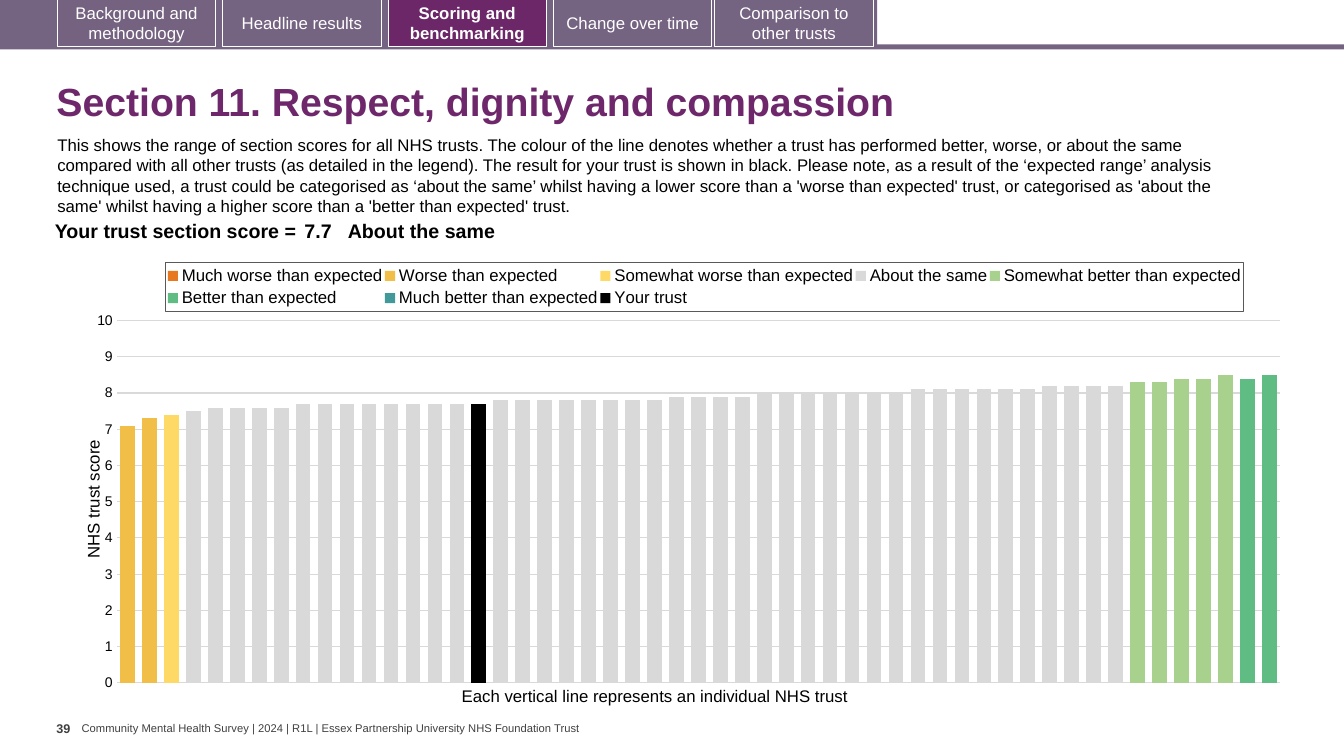
"""Build the section score slide with its tabs, score row and chart of trusts."""
from copy import deepcopy
from lxml.etree import SubElement
from pptx import Presentation
from pptx.chart.data import CategoryChartData as Data
from pptx.dml.color import RGBColor as RGB
from pptx.enum.chart import XL_CHART_TYPE as Kind, XL_LEGEND_POSITION as Spot
from pptx.enum.chart import XL_TICK_MARK as Tick
from pptx.enum.shapes import MSO_SHAPE as Form
from pptx.enum.text import MSO_ANCHOR as Anchor, PP_ALIGN as Align
from pptx.oxml import parse_xml
from pptx.oxml.ns import qn
from pptx.util import Inches, Pt

HUES = {"bar": "756382", "tab": "746280", "now": "6B2768", "title": "6D276A",
        "white": "FFFFFF", "black": "000000", "foot": "404040",
        "grid": "D9D9D9", "edge": "595959"}
TABS = [("Background and methodology", 0.57, "tab"),
        ("Headline results", 2.21, "bar"),
        ("Scoring and benchmarking", 3.85, "now"),
        ("Change over time", 5.49, "bar"),
        ("Comparison to other trusts", 7.09, "bar")]
TITLE = "Section 11. Respect, dignity and compassion"
INTRO = ("This shows the range of section scores for all NHS trusts. The colour of the "
         "line denotes whether a trust has performed better, worse, or about the same "
         "compared with all other trusts (as detailed in the legend). The result for "
         "your trust is shown in black. Please note, as a result of the ‘expected range’ "
         "analysis technique used, a trust could be categorised as ‘about the same’ "
         "whilst having a lower score than a 'worse than expected' trust, or categorised "
         "as 'about the same' whilst having a higher score than a 'better than expected' "
         "trust.")
NOTES = [(INTRO, (0.47, 1.29, 12.13, 0.91), 0.1, 0.05, 12, "black", False, True),
         ("Each vertical line represents an individual NHS trust",
          (4.48, 6.75, 4.11, 0.3), 0.1, 0.05, 12, "black", False, False),
         ("39", (0.56, 7.1, 0.25, 0.4), 0, 0.05, 9, "foot", True, False),
         ("Community Mental Health Survey | 2024 | R1L | Essex Partnership University "
          "NHS Foundation Trust", (0.81, 7.16, 5.01, 0.13), 0, 0, 8, "foot", False, False)]
SCORE = [("Your trust section score =", 2.63, 0.04, Align.RIGHT),
         ("7.7", 0.47, 0.04, Align.LEFT), ("About the same", 8.6, 0, Align.LEFT)]
COUNT = 53
SAME = ([7.5] + [7.6] * 4 + [7.7] * 9 + [7.8] * 8 + [7.9] * 4 + [8] * 7
        + [8.1] * 6 + [8.2] * 4)
BANDS = [("Much worse than expected", "E87722", 0, []),
         ("Worse than expected", "F1BE48", 0, [7.1, 7.3]),
         ("Somewhat worse than expected", "FFD966", 2, [7.4]),
         ("About the same", "D9D9D9", 3, SAME),
         ("Somewhat better than expected", "A9D18E", 46, [8.3, 8.3, 8.4, 8.4, 8.5]),
         ("Better than expected", "5FBD83", 51, [8.4, 8.5]),
         ("Much better than expected", "419999", 0, []),
         ("Your trust", "000000", 16, [7.7])]


def hue(name):
    return RGB.from_string(HUES[name])


def ink(font, size, name="black", bold=False):
    for key, val in {"name": "Arial", "size": Pt(size), "bold": bold}.items():
        setattr(font, key, val)
    font.color.rgb = hue(name)


def write(frame, text, size, name, bold=False, align=Align.LEFT):
    para = frame.paragraphs[0]
    para.alignment = align
    run = para.add_run()
    run.text = text
    ink(run.font, size, name, bold)


def pad(box, side, end):
    box.margin_left = box.margin_right = Inches(side)
    box.margin_top = box.margin_bottom = Inches(end)


def block(slide, at, name):
    shape = slide.shapes.add_shape(Form.RECTANGLE, *map(Inches, at))
    shape.shadow.inherit = False
    shape.fill.solid()
    shape.fill.fore_color.rgb = hue(name)
    shape.line.fill.background()
    return shape


def draw_tabs(slide):
    block(slide, (0, 0.44, 13.33, 0.05), "bar")
    block(slide, (0, 0, 8.7, 0.47), "bar")
    for text, left, name in TABS:
        tab = block(slide, (left, -0.01, 1.57, 0.47), name)
        tab.line.color.rgb = hue("white")
        tab.line.width = Pt(0.75)
        frame = tab.text_frame
        frame.word_wrap = True
        frame.vertical_anchor = Anchor.MIDDLE
        write(frame, text, 12, "white", name == "now", Align.CENTER)


def draw_text(slide):
    title = slide.shapes.title
    for key, val in zip(("left", "top", "width", "height"), (0.46, 0.67, 12.49, 0.72)):
        setattr(title, key, Inches(val))
    title.text_frame.vertical_anchor = Anchor.MIDDLE
    write(title.text_frame, TITLE, 28, "title", True)
    title.text_frame.paragraphs[0].line_spacing = 0.9
    for text, at, side, end, size, name, bold, wrap in NOTES:
        frame = slide.shapes.add_textbox(*map(Inches, at)).text_frame
        frame.word_wrap = wrap
        pad(frame, side, end)
        write(frame, text, size, name, bold)


def draw_score(slide):
    at = map(Inches, (0.35, 2.15, 11.7, 0.31))
    table = slide.shapes.add_table(1, len(SCORE), *at).table
    table.first_row = table.horz_banding = False
    for i, (text, width, side, align) in enumerate(SCORE):
        table.columns[i].width = Inches(width)
        cell = table.cell(0, i)
        cell.fill.background()
        pad(cell, side, 0.04)
        write(cell.text_frame, text, 14, "black", True, align)


def place(owner, **spots):
    for old in owner.findall(qn("c:layout")):
        owner.remove(old)
    box = SubElement(owner, qn("c:layout"))
    part = SubElement(box, qn("c:manualLayout"))
    if owner.tag == qn("c:plotArea"):
        SubElement(part, qn("c:layoutTarget")).set("val", "inner")
    for key in "xy":
        SubElement(part, qn(f"c:{key}Mode")).set("val", "edge")
    for key, val in spots.items():
        SubElement(part, qn(f"c:{key}")).set("val", str(val))
    owner.insert(sum(kid.tag in (qn("c:tx"), qn("c:legendPos")) for kid in owner), box)


def split(chart):
    """Move the last series to a second pair of axes."""
    bars = chart.plots[0]._element
    twin = deepcopy(bars)
    bars.remove(bars.findall(qn("c:ser"))[-1])
    for row in twin.findall(qn("c:ser"))[:-1]:
        twin.remove(row)
    bars.addnext(twin)
    cat, val = chart.category_axis._element, chart.value_axis._element
    cat2, val2 = deepcopy(cat), deepcopy(val)
    val.addnext(val2)
    val2.addnext(cat2)
    for node, own in zip(twin.findall(qn("c:axId")), ("501", "502")):
        node.set("val", own)
    for axis, own, other in ((cat2, "501", "502"), (val2, "502", "501")):
        axis.find(qn("c:axId")).set("val", own)
        axis.find(qn("c:crossAx")).set("val", other)
    for tag in ("c:majorGridlines", "c:title"):
        val2.remove(val2.find(qn(tag)))
    for tag, word in {"axPos": "r", "majorTickMark": "out", "tickLblPos": "none",
                      "crosses": "max"}.items():
        for node in val2.findall(qn(f"c:{tag}")):
            node.set("val", word)


def draw_chart(slide):
    data = Data()
    data.categories = [str(i + 1) for i in range(COUNT)]
    for name, _, start, vals in BANDS:
        data.add_series(name, [None] * start + vals + [None] * (COUNT - start - len(vals)))
    at = map(Inches, (0.67, 2.47, 12.15, 4.44))
    chart = slide.shapes.add_chart(Kind.COLUMN_CLUSTERED, *at, data).chart
    chart.has_title, chart.has_legend = False, True
    ink(chart.font, 10)
    plot, axis, key = chart.plots[0], chart.value_axis, chart.legend
    plot.gap_width, plot.overlap, plot.vary_by_categories = 50, 100, False
    for row, band in zip(plot.series, BANDS):
        row.format.fill.solid()
        row.format.fill.fore_color.rgb = RGB.from_string(band[1])
    chart.category_axis.visible = False
    for name, val in {"minimum_scale": 0, "maximum_scale": 10, "major_unit": 1,
                      "major_tick_mark": Tick.NONE, "has_major_gridlines": True}.items():
        setattr(axis, name, val)
    axis.format.line.fill.background()
    grid = axis.major_gridlines.format.line
    grid.color.rgb, grid.width = hue("grid"), Pt(0.75)
    ink(axis.tick_labels.font, 10)
    write(axis.axis_title.text_frame, "NHS trust score", 12, "black")
    place(axis.axis_title._element, x=0.01, y=0.42)
    key.position, key.include_layout = Spot.TOP, False
    ink(key.font, 12)
    place(key._element, x=0.08, y=0.03, w=0.88, h=0.11)
    key._element.find(qn("c:txPr")).addprevious(parse_xml(
        '<c:spPr xmlns:c="http://schemas.openxmlformats.org/drawingml/2006/chart" '
        'xmlns:a="http://schemas.openxmlformats.org/drawingml/2006/main"><a:ln w="9525">'
        f'<a:solidFill><a:srgbClr val="{HUES["edge"]}"/></a:solidFill></a:ln></c:spPr>'))
    split(chart)
    place(plot._element.getparent(), x=0.04, y=0.16, w=0.95, h=0.81)


deck = Presentation()
deck.slide_width, deck.slide_height = Inches(13.33), Inches(7.5)
page = deck.slides.add_slide(deck.slide_layouts[5])
for draw in (draw_tabs, draw_text, draw_chart, draw_score):
    draw(page)
deck.save("out.pptx")
